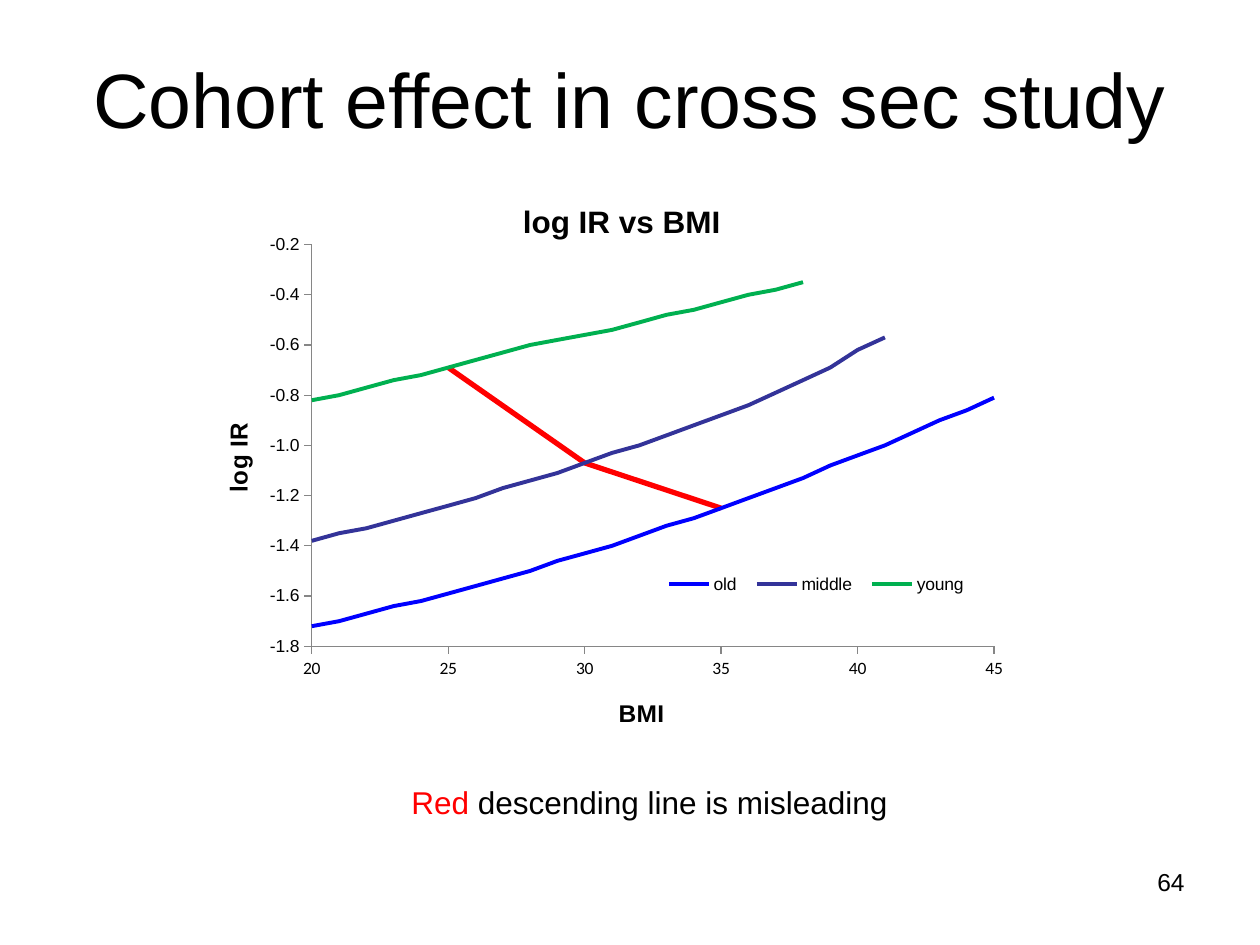
from dataclasses import dataclass
from lxml import etree
from pptx import Presentation
from pptx import util as u
from pptx.chart import data as cd
from pptx.dml.color import RGBColor
from pptx.enum import chart as ce, text as te
from pptx.oxml import parse_xml
from pptx.oxml.ns import nsdecls, qn

HUES = {"black": "000000", "blue": "0000FF", "navy": "333399",
        "green": "00B050", "red": "FF0000", "gray": "868686"}


@dataclass
class Line:
    name: str
    hue: str
    ys: list[float]
    start: int = 20
    step: int = 1
    wide: float = 2.25


LINES = [
    Line("old", "blue", [
        -1.72, -1.7, -1.67, -1.64, -1.62, -1.59, -1.56, -1.53, -1.5,
        -1.46, -1.43, -1.4, -1.36, -1.32, -1.29, -1.25, -1.21, -1.17,
        -1.13, -1.08, -1.04, -1, -0.95, -0.9, -0.86, -0.81]),
    Line("middle", "navy", [
        -1.38, -1.35, -1.33, -1.3, -1.27, -1.24, -1.21, -1.17, -1.14,
        -1.11, -1.07, -1.03, -1, -0.96, -0.92, -0.88, -0.84, -0.79,
        -0.74, -0.69, -0.62, -0.57]),
    Line("young", "green", [
        -0.82, -0.8, -0.77, -0.74, -0.72, -0.69, -0.66, -0.63, -0.6,
        -0.58, -0.56, -0.54, -0.51, -0.48, -0.46, -0.43, -0.4, -0.38,
        -0.35]),
    Line("Series 4", "red", [-1.25, -1.07, -0.69], 35, -5, 3),
]


def tint(hue: str) -> RGBColor:
    return RGBColor.from_string(HUES[hue])


def style(font, size: float, bold: bool = False, face: str = "Arial",
          hue: str = "black") -> None:
    font.size, font.bold, font.name = u.Pt(size), bold, face
    font.color.rgb = tint(hue)


def write(slide, parts: list[tuple[str, str]], box: tuple, *, size: float,
          align=te.PP_ALIGN.LEFT, anchor=te.MSO_ANCHOR.TOP) -> None:
    """Add a text box of (text, hue) parts."""
    frame = slide.shapes.add_textbox(*map(u.Pt, box)).text_frame
    frame.word_wrap, frame.vertical_anchor = True, anchor
    para = frame.paragraphs[0]
    para.alignment = align
    for words, hue in parts:
        run = para.add_run()
        run.text = words
        style(run.font, size, hue=hue)


def place(node, after: str, **spots: float) -> None:
    """Give a chart part a fixed place, as fractions of the chart."""
    for old in node.findall(qn("c:layout")):
        node.remove(old)
    inner = '<c:layoutTarget val="inner"/>' if after == "" else ""
    modes = "".join(f'<c:{k}Mode val="edge"/>' for k in "xy")
    vals = "".join(f'<c:{k} val="{v}"/>' for k, v in spots.items())
    tree = parse_xml(f'<c:layout {nsdecls("c")}><c:manualLayout>{inner}'
                     f'{modes}{vals}</c:manualLayout></c:layout>')
    if after:
        node.findall(qn(after))[-1].addnext(tree)
    else:
        node.insert(0, tree)


def head(owner, words: str, size: float, x: float, y: float) -> None:
    """Title a chart or an axis."""
    frame = owner.text_frame
    frame.text = words
    style(frame.paragraphs[0].runs[0].font, size, bold=True)
    place(owner._element, "c:tx", x=x, y=y)


def scale(axis, low: float, high: float, step: float, fmt: str,
          face: str) -> None:
    axis.minimum_scale, axis.maximum_scale = low, high
    axis.major_unit = step
    axis.has_major_gridlines = False
    axis.major_tick_mark = ce.XL_TICK_MARK.OUTSIDE
    axis.minor_tick_mark = ce.XL_TICK_MARK.NONE
    axis.tick_label_position = ce.XL_TICK_LABEL_POSITION.LOW
    axis.crosses = ce.XL_AXIS_CROSSES.MINIMUM
    axis.format.line.color.rgb = tint("gray")
    axis.format.line.width = u.Pt(0.75)
    labels = axis.tick_labels
    labels.number_format, labels.number_format_is_linked = fmt, False
    style(labels.font, 10, face=face)


def plot(slide, box: tuple) -> None:
    data = cd.XyChartData()
    for line in LINES:
        row = data.add_series(line.name)
        for i, y in enumerate(line.ys):
            row.add_data_point(line.start + i * line.step, y)
    kind = ce.XL_CHART_TYPE.XY_SCATTER_LINES_NO_MARKERS
    chart = slide.shapes.add_chart(kind, *map(u.Pt, box), data).chart
    style(chart.font, 10)
    chart.plots[0].vary_by_categories = False

    # Lines
    for line, row in zip(LINES, chart.plots[0].series):
        row.smooth = False
        row.marker.style = ce.XL_MARKER_STYLE.NONE
        row.format.line.color.rgb = tint(line.hue)
        row.format.line.width = u.Pt(line.wide)

    # Axes and titles
    across, up = chart.category_axis, chart.value_axis
    scale(across, 20, 45, 5, "#,##0", "Calibri")
    scale(up, -1.8, -0.2, 0.2, "#,##0.0", "Arial")
    head(chart.chart_title, "log IR vs BMI", 18, 0.38, 0.05)
    head(across.axis_title, "BMI", 14, 0.5, 0.94)
    head(up.axis_title, "log IR", 14, 0.01, 0.45)
    area = chart._chartSpace.chart.plotArea
    place(area, "", x=0.126, y=0.137, w=0.844, h=0.719)

    # Legend, without the red line
    chart.has_legend = True
    key = chart.legend
    key.position = ce.XL_LEGEND_POSITION.RIGHT
    key.include_in_layout = False
    style(key.font, 10)
    entry = etree.Element(qn("c:legendEntry"))
    etree.SubElement(entry, qn("c:idx"), val=str(len(LINES) - 1))
    etree.SubElement(entry, qn("c:delete"), val="1")
    key._element.find(qn("c:legendPos")).addnext(entry)
    place(key._element, "c:legendEntry", x=0.55, y=0.72, w=0.4, h=0.05)


def main() -> None:
    deck = Presentation()
    deck.slide_width, deck.slide_height = u.Pt(720), u.Pt(540)
    slide = deck.slides.add_slide(deck.slide_layouts[6])
    # Title and page number
    write(slide, [("Cohort effect in cross sec study", "black")],
          (36, 21.6, 648, 68.4), size=44, align=te.PP_ALIGN.CENTER,
          anchor=te.MSO_ANCHOR.MIDDLE)
    write(slide, [("64", "black")], (516, 492, 168, 37.5), size=14,
          align=te.PP_ALIGN.RIGHT)
    # Chart and remark
    plot(slide, (120, 96, 462, 324))
    write(slide, [("Red", "red"), (" descending line is misleading", "black")],
          (228, 444, 324, 29), size=18)
    deck.save("out.pptx")


if __name__ == "__main__":
    main()
